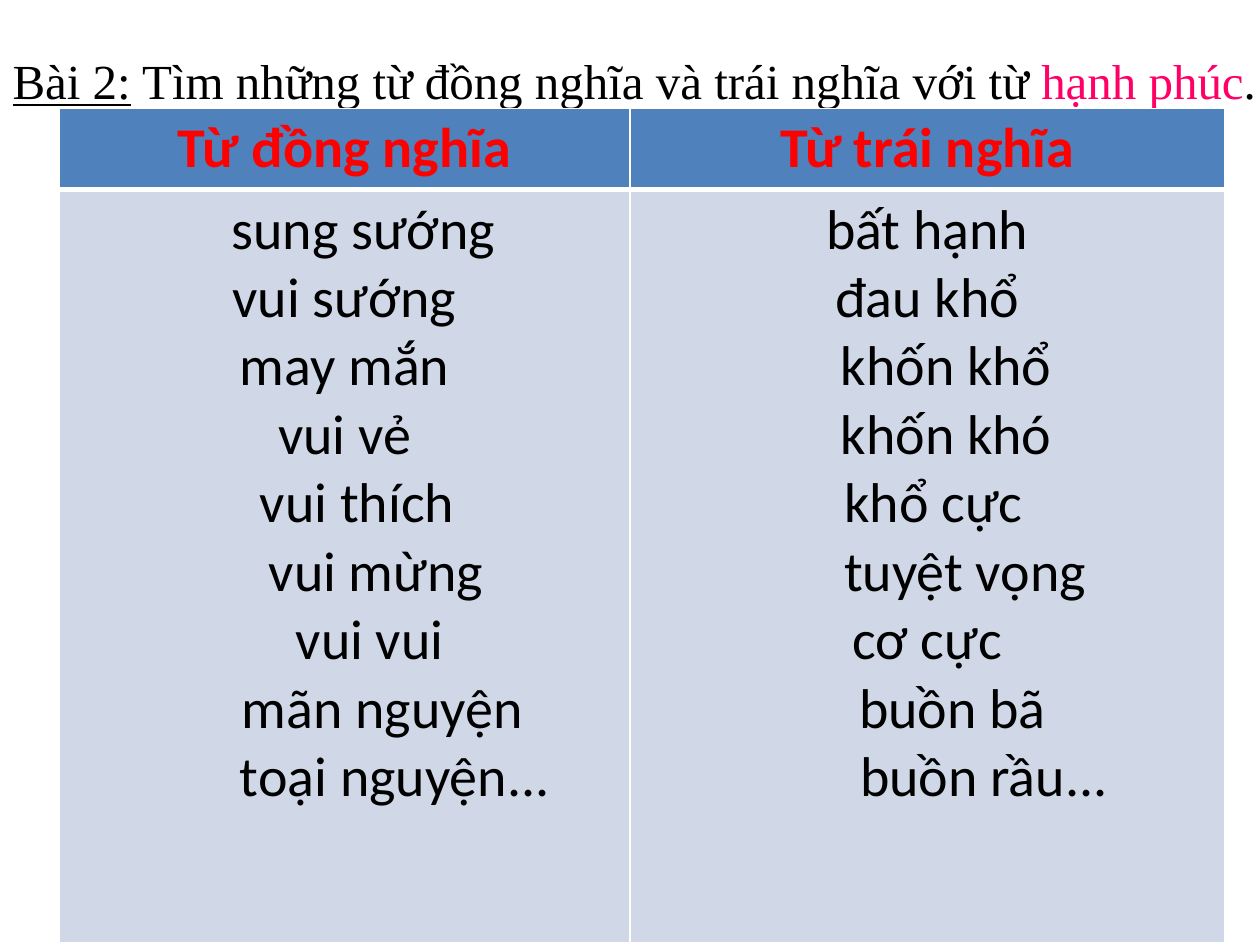
"""Build a slide with a table of synonyms and antonyms of "hạnh phúc"."""
from lxml.etree import SubElement
from pptx import Presentation
from pptx.dml.color import RGBColor
from pptx.enum.text import MSO_ANCHOR, MSO_AUTO_SIZE, PP_ALIGN
from pptx.oxml.ns import qn
from pptx.util import Inches, Pt

COLORS = {
    "black": "000000", "pink": "FF0066", "red": "FF0000",
    "white": "FFFFFF", "blue": "4F81BD", "pale": "D0D8E8",
}


def add_run(para, text, font, size, color):
    run = para.add_run()
    run.text = text
    run.font.name = font
    run.font.size = Pt(size)
    run.font.color.rgb = RGBColor.from_string(COLORS[color])
    return run


def add_edge(cell, side, width):
    line = SubElement(cell._tc.get_or_add_tcPr(), qn(f"a:ln{side}"), w=str(Pt(width)))
    fill = SubElement(line, qn("a:solidFill"))
    SubElement(fill, qn("a:srgbClr"), val=COLORS["white"])


deck = Presentation()
deck.slide_width, deck.slide_height = Inches(10), Inches(7.5)
slide = deck.slides.add_slide(deck.slide_layouts[5])

title = slide.shapes.title
title.left, title.top = Inches(0), Inches(0.3)
title.width, title.height = Inches(10.42), Inches(0.57)
frame = title.text_frame
frame.word_wrap = True
frame.auto_size = MSO_AUTO_SIZE.NONE
frame.vertical_anchor = MSO_ANCHOR.TOP
frame.margin_top = Inches(0.1)
para = frame.paragraphs[0]
para.alignment = PP_ALIGN.LEFT
for text, color, under in [
    ("Bài 2:", "black", True),
    (" Tìm những từ đồng nghĩa và trái nghĩa với từ ", "black", False),
    ("hạnh phúc", "pink", False),
    (".", "black", False),
]:
    add_run(para, text, "Times New Roman", 28, color).font.underline = under

columns = [
    (4.53, "Từ đồng nghĩa", [
        ("sung sướng", 0.3), ("vui sướng", 0), ("may mắn", 0),
        ("vui vẻ", 0), ("vui thích", 0.2), ("vui mừng", 0.5),
        ("vui vui", 0.4), ("mãn nguyện", 0.6), ("toại nguyện...", 0.8),
    ]),
    (4.72, "Từ trái nghĩa", [
        ("bất hạnh", 0), ("đau khổ", 0), ("khốn khổ", 0.3),
        ("khốn khó", 0.3), ("khổ cực", 0.1), ("tuyệt vọng", 0.6),
        ("cơ cực", 0), ("buồn bã", 0.4), ("buồn rầu...", 0.9),
    ]),
]
table = slide.shapes.add_table(
    2, 2, Inches(0.47), Inches(0.86), Inches(9.25), Inches(6.6)).table
table.rows[0].height, table.rows[1].height = Inches(0.62), Inches(5.98)

for col, (width, head, words) in enumerate(columns):
    table.columns[col].width = Inches(width)
    for row, lines in enumerate([[(head, 0)], words]):
        cell = table.cell(row, col)
        for side, weight in zip("LRTB", [1, 1, 3 if row else 1, 1 if row else 3]):
            add_edge(cell, side, weight)
        cell.fill.solid()
        cell.fill.fore_color.rgb = RGBColor.from_string(COLORS["pale" if row else "blue"])
        for num, (text, indent) in enumerate(lines):
            frame = cell.text_frame
            para = frame.add_paragraph() if num else frame.paragraphs[0]
            para.alignment = PP_ALIGN.CENTER
            if indent:
                para._p.get_or_add_pPr().set("marL", str(Inches(indent)))
            run = add_run(para, text, "Calibri", 32, "black" if row else "red")
            run.font.bold = row == 0

deck.save("out.pptx")
